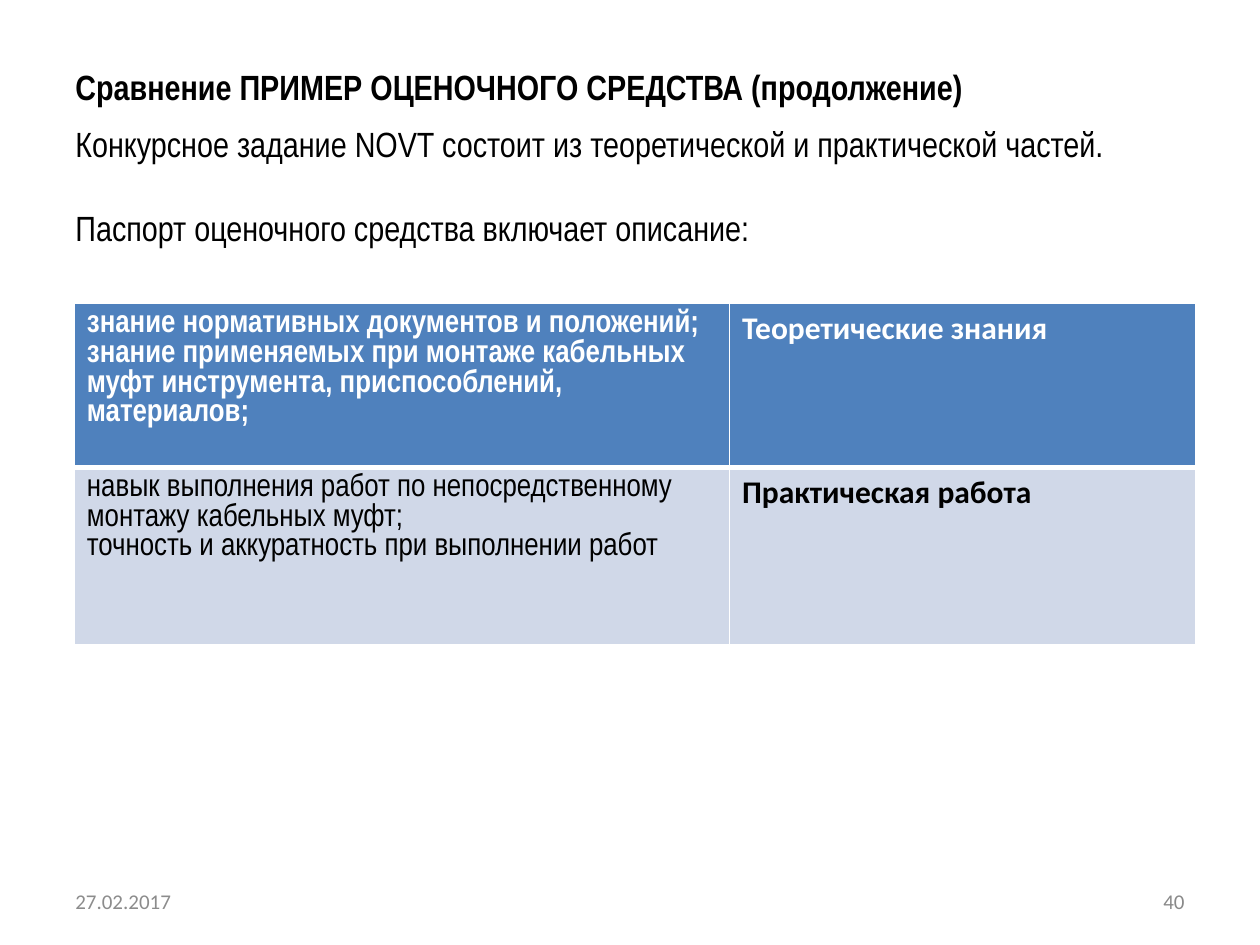
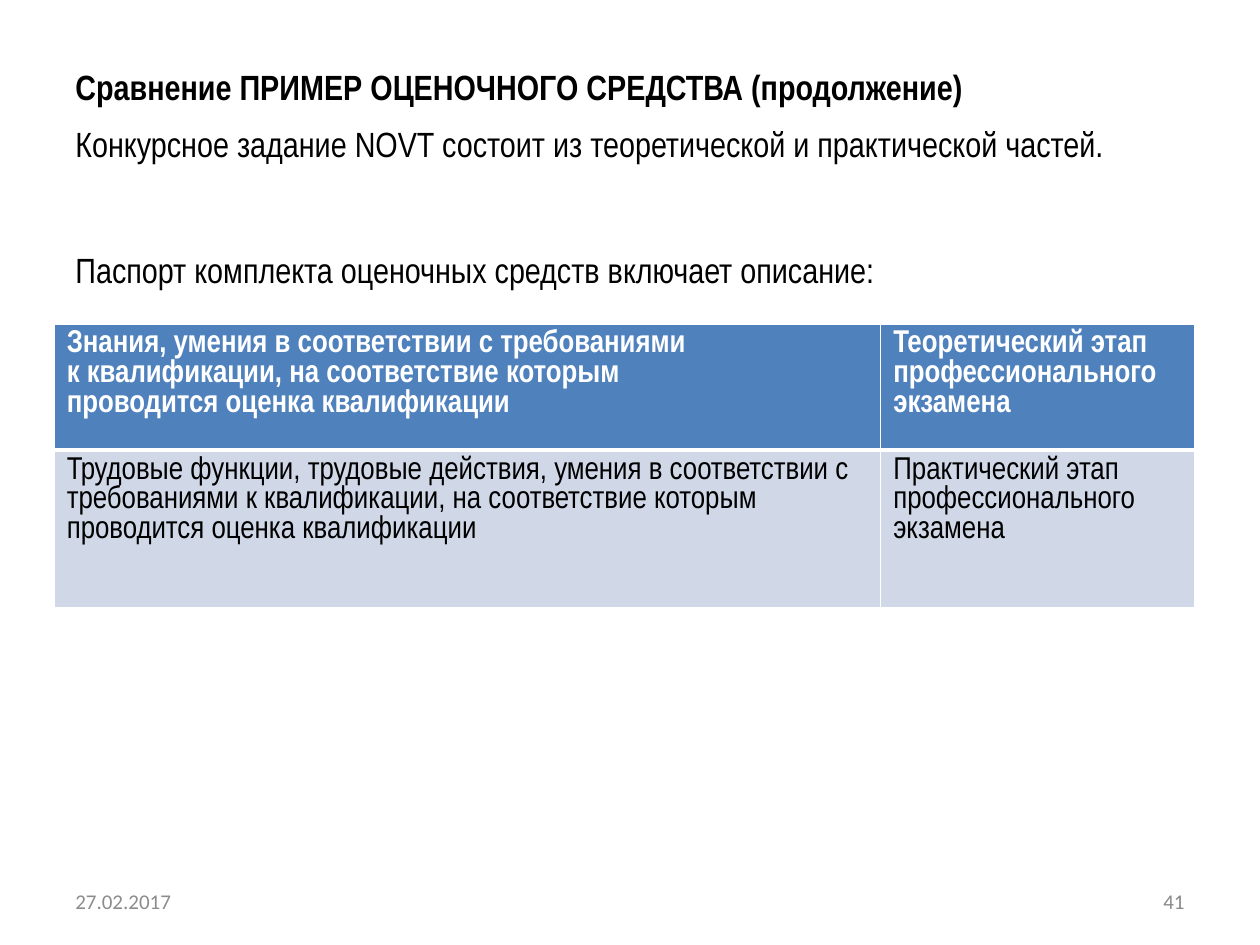
from dataclasses import dataclass

from lxml.etree import SubElement
from pptx import Presentation
from pptx.dml.color import RGBColor
from pptx.enum.text import MSO_ANCHOR as Anchor, PP_ALIGN as Align
from pptx.oxml.ns import qn
from pptx.util import Inches, Pt

BLACK = RGBColor(0x00, 0x00, 0x00)
WHITE = RGBColor(0xFF, 0xFF, 0xFF)
BLUE = RGBColor(0x4F, 0x81, 0xBD)
PALE = RGBColor(0xD0, 0xD8, 0xE8)
DATE_GRAY = RGBColor(0x8C, 0x8C, 0x8C)
PAGE_GRAY = RGBColor(0x89, 0x89, 0x89)

NARROW = "Arial Narrow"
CALIBRI = "Calibri"

TITLE = "Сравнение ПРИМЕР ОЦЕНОЧНОГО СРЕДСТВА (продолжение)"
INTRO = "Конкурсное задание NOVT состоит из теоретической и практической частей."
DATE = "27.02.2017"


@dataclass(frozen=True)
class Style:
    size: int
    color: RGBColor = BLACK
    bold: bool = False
    font: str = NARROW


@dataclass(frozen=True)
class Cell:
    lines: tuple[str, ...]
    bold: bool = False
    font: str = NARROW


@dataclass(frozen=True)
class Grid:
    left: float
    top: float
    cols: tuple[float, ...]
    rows: tuple[float, ...]
    cells: tuple[tuple[Cell, ...], ...]


@dataclass(frozen=True)
class Page:
    number: int
    lead: str
    gap: int
    grid: Grid


PAGES = (
    Page(40, "Паспорт оценочного средства включает описание:", 24, Grid(
        0.59, 2.41, (5.2, 3.7), (1.26, 1.41), (
            (Cell(("знание нормативных документов и положений;",
                   "знание применяемых при монтаже кабельных муфт инструмента, "
                   "приспособлений, материалов;"), True),
             Cell(("Теоретические знания",), True, CALIBRI)),
            (Cell(("навык выполнения работ по непосредственному монтажу "
                   "кабельных муфт;",
                   "точность и аккуратность при выполнении работ")),
             Cell(("Практическая работа",), True, CALIBRI)),
        ))),
    Page(41, "Паспорт комплекта оценочных средств включает описание:", 48, Grid(
        0.43, 2.57, (6.56, 2.49), (0.88, 1.25), (
            (Cell(("Знания, умения в соответствии с требованиями\v"
                   "к квалификации, на соответствие которым\v"
                   "проводится оценка квалификации",), True),
             Cell(("Теоретический этап профессионального экзамена",), True)),
            (Cell(("Трудовые функции, трудовые действия, умения в соответствии "
                   "с требованиями к квалификации, на соответствие которым "
                   "проводится оценка квалификации",)),
             Cell(("Практический этап профессионального экзамена",))),
        ))),
)


def write(frame, lines: tuple[str, ...], style: Style) -> None:
    frame.word_wrap = True
    frame.text = "\n".join(lines)
    for para in frame.paragraphs:
        font = para.font
        font.size, font.name, font.bold = Pt(style.size), style.font, style.bold
        font.color.rgb = style.color


def add_text(slide, box: tuple[float, ...], lines: tuple[str, ...],
             style: Style, anchor: Anchor = Anchor.MIDDLE):
    frame = slide.shapes.add_textbox(*map(Inches, box)).text_frame
    write(frame, lines, style)
    frame.vertical_anchor = anchor
    return frame


def add_edges(cell, widths: dict[str, int]) -> None:
    """Draw white borders; call before the fill, which must follow them."""
    props = cell._tc.get_or_add_tcPr()
    for side, width in widths.items():
        line = SubElement(props, qn(f"a:ln{side}"), w=str(Pt(width)))
        fill = SubElement(line, qn("a:solidFill"))
        SubElement(fill, qn("a:srgbClr"), val=str(WHITE))


def add_grid(slide, grid: Grid) -> None:
    box = (grid.left, grid.top, sum(grid.cols), sum(grid.rows))
    table = slide.shapes.add_table(
        len(grid.rows), len(grid.cols), *map(Inches, box)).table
    for col, width in zip(table.columns, grid.cols):
        col.width = Inches(width)
    for row, height in zip(table.rows, grid.rows):
        row.height = Inches(height)
    for r, items in enumerate(grid.cells):
        head = r == 0
        for c, item in enumerate(items):
            cell = table.cell(r, c)
            add_edges(cell, {"L": 1, "R": 1, "T": 1 if head else 3,
                             "B": 3 if head else 1})
            cell.fill.solid()
            cell.fill.fore_color.rgb = BLUE if head else PALE
            color = WHITE if head else BLACK
            write(cell.text_frame, item.lines,
                  Style(18, color, item.bold, item.font))


def add_page(deck, page: Page) -> None:
    slide = deck.slides.add_slide(deck.slide_layouts[6])
    add_text(slide, (0.5, 0.3, 9, 0.77), (TITLE,), Style(20, bold=True))
    body = add_text(slide, (0.5, 0.92, 9, 5.78), (INTRO, page.lead),
                    Style(20), Anchor.TOP)
    body.paragraphs[1].space_before = Pt(page.gap)
    add_text(slide, (0.5, 6.95, 2.33, 0.4), (DATE,),
             Style(12, DATE_GRAY, font=CALIBRI))
    foot = add_text(slide, (7.17, 6.95, 2.33, 0.4), (str(page.number),),
                    Style(12, PAGE_GRAY, font=CALIBRI))
    foot.paragraphs[0].alignment = Align.RIGHT
    add_grid(slide, page.grid)


def main() -> None:
    deck = Presentation()
    deck.slide_width, deck.slide_height = Inches(10), Inches(7.5)
    for page in PAGES:
        add_page(deck, page)
    deck.save("out.pptx")


if __name__ == "__main__":
    main()
